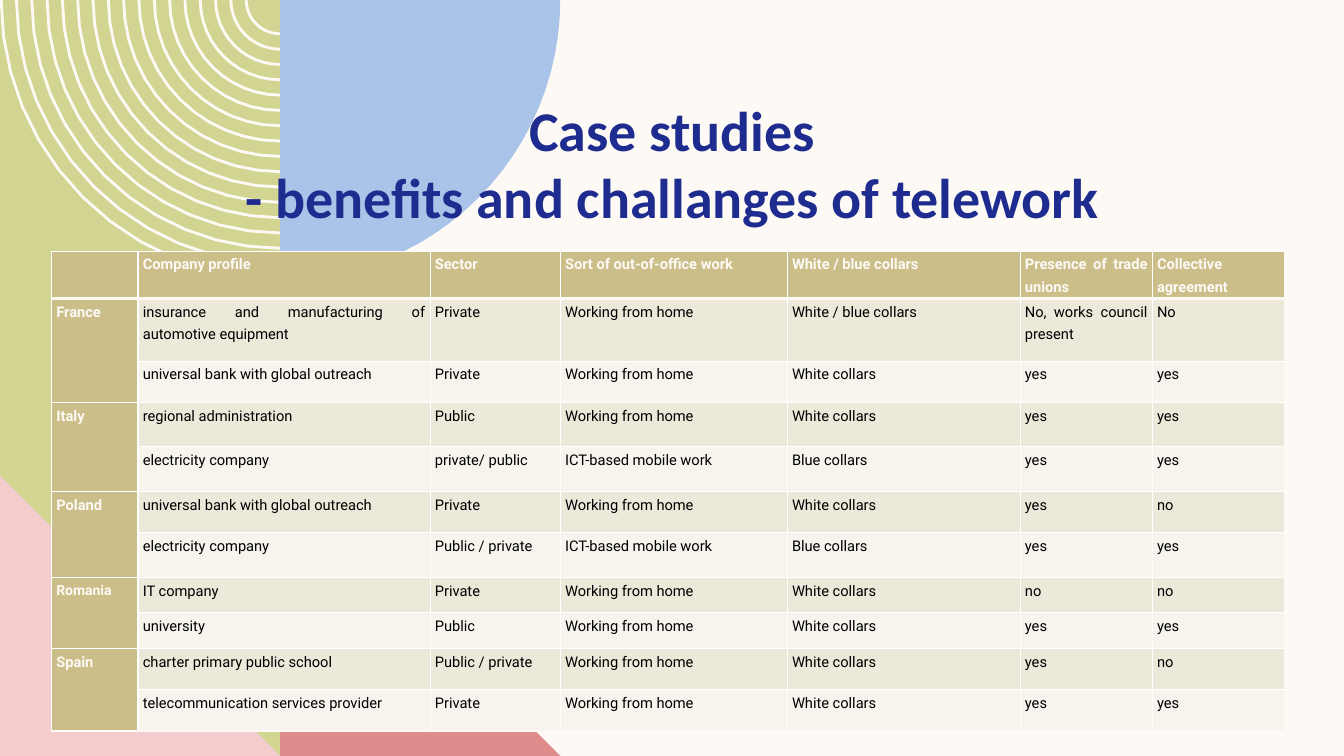
import math

from lxml import etree
from pptx import Presentation
from pptx import util as u
from pptx.dml.color import RGBColor
from pptx.enum import text
from pptx.oxml import ns

COLORS = {
    "cream": "FDFAF6", "green": "D2D592", "blue": "AAC3E8", "red": "DE8C8C",
    "pink": "F5CDCE", "navy": "1F2C8F", "gold": "CCBE89", "sand": "ECE8DA",
    "pale": "F6F4ED", "black": "000000",
}
WIDTH, HEIGHT = 33.87, 19.05
SIDE = 7.06  # width of the corner tiles, also the radius of the quarter circles


def quarter(radius, start, steps=12):
    """Points in cm along a quarter circle around the top right tile corner."""
    angles = [math.radians(start + 90 * i / steps) for i in range(steps + 1)]
    return [(SIDE + radius * math.cos(a), radius * math.sin(a)) for a in angles]


def add_outline(contours, color, stroke=None):
    """Draw contours, given in cm, as one freeform: filled, or stroked in points."""
    contours = [[(u.Cm(x), u.Cm(y)) for x, y in c] for c in contours]
    fb = slide.shapes.build_freeform(*contours[0][0])
    for i, points in enumerate(contours):
        if i:
            fb.move_to(*points[0])
        fb.add_line_segments(points[1:], close=not stroke)
    sp = fb.convert_to_shape()
    sp.shadow.inherit = False
    painted, unpainted = (sp.line.fill, sp.fill) if stroke else (sp.fill, sp.line.fill)
    unpainted.background()
    painted.solid()
    painted.fore_color.rgb = RGBColor.from_string(COLORS[color])
    if stroke:
        sp.line.width = u.Pt(stroke)


prs = Presentation()
prs.slide_width, prs.slide_height = u.Cm(WIDTH), u.Cm(HEIGHT)
slide = prs.slides.add_slide(prs.slide_layouts[5])
slide.background.fill.solid()
slide.background.fill.fore_color.rgb = RGBColor.from_string(COLORS["cream"])

# Corner decoration
add_outline([[(0, 0), (SIDE, 0), (SIDE, HEIGHT), (0, HEIGHT)]], "green")
add_outline([quarter(7.03 - 0.386 * i, 90) for i in range(17)], "cream", stroke=2)
add_outline([[(SIDE, 0)] + quarter(SIDE, 0, steps=24)], "blue")
for left, color in ((SIDE, "red"), (0, "pink")):
    add_outline([[(left, HEIGHT - SIDE), (left, HEIGHT), (left + SIDE, HEIGHT)]], color)

# Title, in front of the decoration
title = slide.shapes.title
slide.shapes._spTree.append(title._element)
title.left, title.top = u.Cm(0.66), u.Cm(2.4)
title.width, title.height = u.Cm(32.56), u.Cm(3.5)
tf = title.text_frame
tf.margin_left = tf.margin_right = tf.margin_top = tf.margin_bottom = 0
tf.vertical_anchor = text.MSO_ANCHOR.TOP
tf.auto_size = text.MSO_AUTO_SIZE.NONE
tf.text = "Case studies\v- benefits and challanges of telework"
p = tf.paragraphs[0]
p.alignment = text.PP_ALIGN.CENTER
p.font.name, p.font.size, p.font.bold = "Calibri", u.Pt(40), True
p.font.color.rgb = RGBColor.from_string(COLORS["navy"])

# Case table
HOME, MOBILE = "Working from home", "ICT-based mobile work"
WHITE, BLUE = "White collars", "Blue collars"
BANK, POWER = "universal bank with global outreach", "electricity company"
rows = [
    ("", "Company profile", "Sector", "Sort of out-of-office work",
     "White / blue collars", "Presence of trade unions", "Collective agreement"),
    ("France", "insurance and manufacturing of automotive equipment", "Private",
     HOME, "White / blue collars", "No, works council present", "No"),
    ("", BANK, "Private", HOME, WHITE, "yes", "yes"),
    ("Italy", "regional administration", "Public", HOME, WHITE, "yes", "yes"),
    ("", POWER, "private/ public", MOBILE, BLUE, "yes", "yes"),
    ("Poland", BANK, "Private", HOME, WHITE, "yes", "no"),
    ("", POWER, "Public / private", MOBILE, BLUE, "yes", "yes"),
    ("Romania", "IT company", "Private", HOME, WHITE, "no", "no"),
    ("", "university", "Public", HOME, WHITE, "yes", "yes"),
    ("Spain", "charter primary public school", "Public / private", HOME, WHITE,
     "yes", "no"),
    ("", "telecommunication services provider", "Private", HOME, WHITE, "yes", "yes"),
]
col_widths = [2.18, 7.36, 3.28, 5.72, 5.87, 3.33, 3.33]
row_heights = [1.19, 1.58, 1.04, 1.12, 1.12, 1.04, 1.13, 0.89, 0.9, 1.04, 1.04]
table = slide.shapes.add_table(len(rows), len(col_widths), u.Cm(1.3), u.Cm(6.33),
                               u.Cm(sum(col_widths)), u.Cm(sum(row_heights))).table
for column, width in zip(table.columns, col_widths):
    column.width = u.Cm(width)
for row, height in zip(table.rows, row_heights):
    row.height = u.Cm(height)

for i, row in enumerate(rows):
    for j, value in enumerate(row):
        cell = table.cell(i, j)
        heading = i == 0 or j == 0
        cell.margin_left = cell.margin_right = u.Cm(0.12)
        cell.margin_top = cell.margin_bottom = 0
        cell.fill.solid()
        fill = "gold" if heading else "sand" if i % 2 else "pale"
        cell.fill.fore_color.rgb = RGBColor.from_string(COLORS[fill])
        if value:
            cell.text = value
            p = cell.text_frame.paragraphs[0]
            p.alignment = text.PP_ALIGN.JUSTIFY
            p.line_spacing = 1.3
            p.font.name, p.font.bold = "Roboto", heading
            p.font.size = u.Pt(10 if value == "Romania" else 10.5)
            font_color = COLORS["cream" if heading else "black"]
            p.font.color.rgb = RGBColor.from_string(font_color)
        for k, (tag, points) in enumerate((("lnR", 1), ("lnB", 1 if i else 3))):
            ln = etree.Element(ns.qn("a:" + tag), w=str(u.Pt(points)))
            solid = etree.SubElement(ln, ns.qn("a:solidFill"))
            etree.SubElement(solid, ns.qn("a:srgbClr"), val=COLORS["cream"])
            cell._tc.get_or_add_tcPr().insert(k, ln)

for i in range(1, len(rows), 2):
    table.cell(i, 0).merge(table.cell(i + 1, 0))

prs.save("out.pptx")
